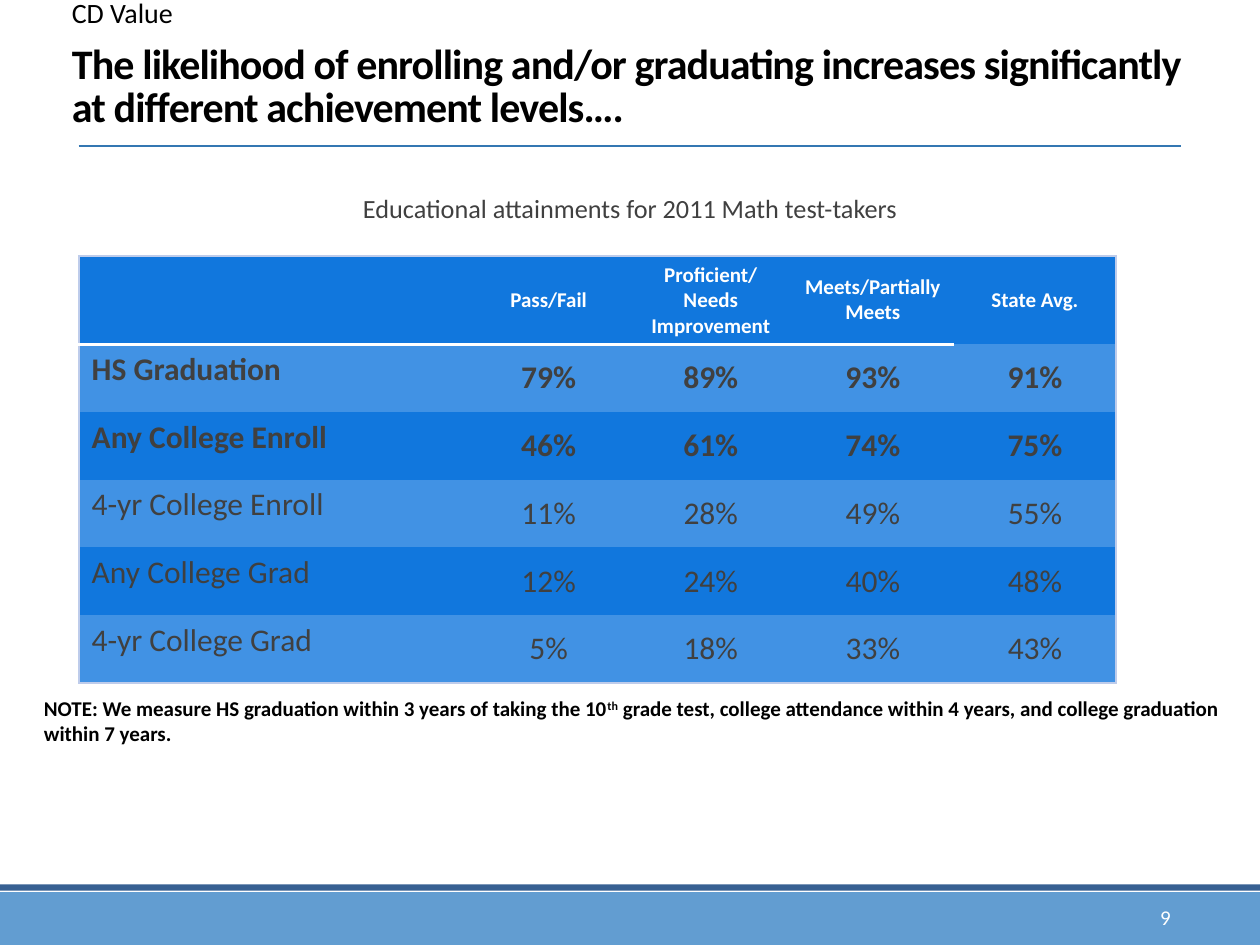
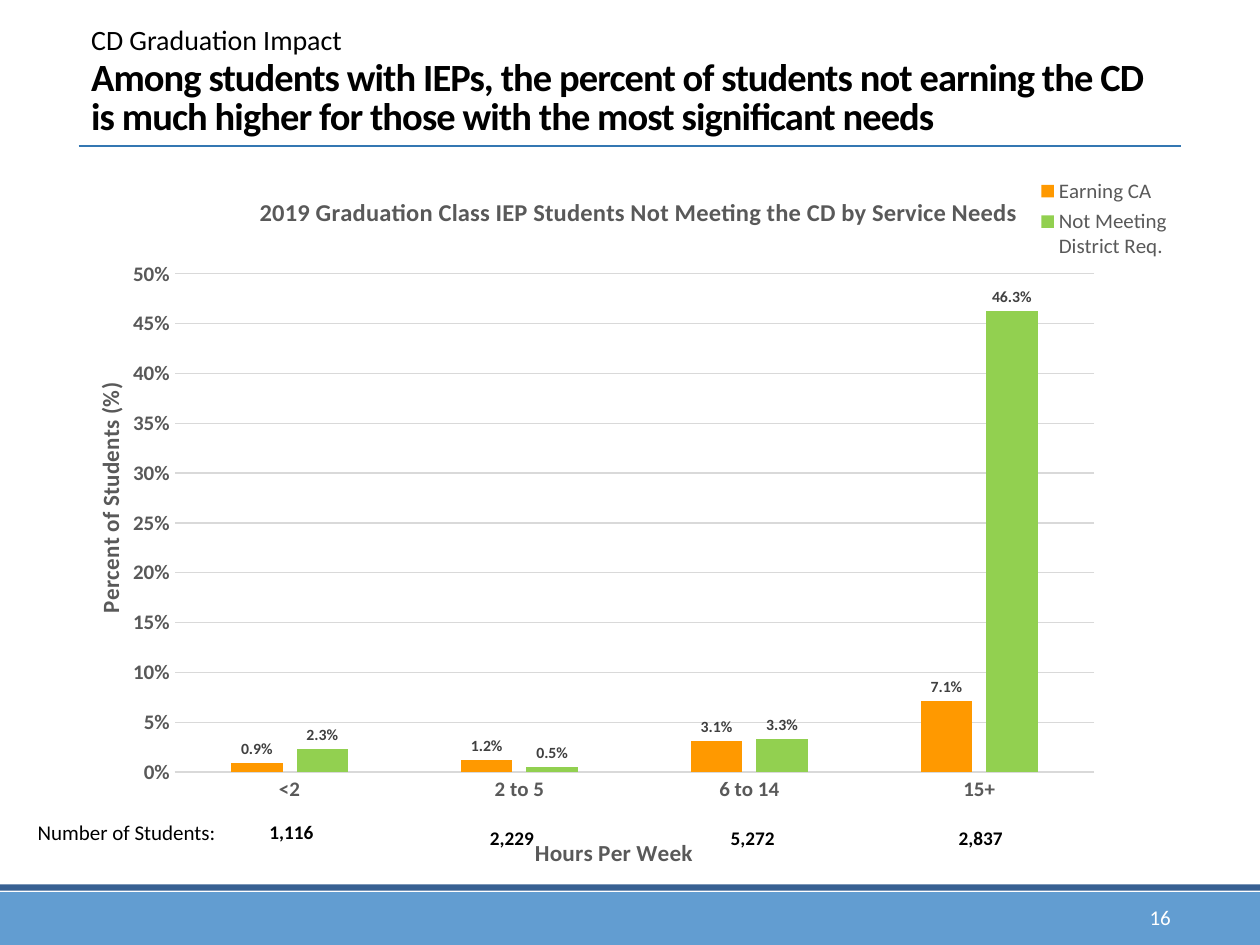
from dataclasses import dataclass
from lxml.etree import SubElement as Sub
from pptx import Presentation
from pptx.chart.data import CategoryChartData as Data
from pptx.dml.color import RGBColor as RGB
from pptx.enum.chart import XL_CHART_TYPE as Kind, XL_LEGEND_POSITION as Side
from pptx.enum.chart import XL_LABEL_POSITION as Spot, XL_TICK_MARK as Tick
from pptx.enum.shapes import MSO_CONNECTOR as Link, MSO_SHAPE as Form
from pptx.enum.text import MSO_ANCHOR as Anchor, PP_ALIGN as Align
from pptx.oxml import parse_xml
from pptx.oxml.ns import nsdecls, qn
from pptx.util import Pt


@dataclass(frozen=True)
class Theme:
    font: str = "Calibri"
    black: str = "000000"
    white: str = "FFFFFF"
    text: str = "404040"
    gray: str = "595959"
    grid: str = "D9D9D9"
    foot: str = "629DD1"
    band: str = "376092"
    rule: str = "3477B2"
    dark: str = "1177DD"
    light: str = "4192E4"
    edge: str = "BECCEB"
    orange: str = "FF9900"
    green: str = "92D050"
    label: float = 9
    count: float = 11
    small: float = 12
    axis: float = 13.3
    chart: float = 14
    lead: float = 15
    kicker: float = 16
    body: float = 18


T = Theme()


# Shared helpers

def style(font, size, color, bold=False):
    font.name, font.size, font.bold = T.font, Pt(size), bold
    font.color.rgb = RGB.from_string(color)


def place(box):
    return [Pt(v) for v in box]


def write(frame, text, size, color=T.black, bold=False, align=Align.LEFT):
    frame.text = text
    for para in frame.paragraphs:
        para.alignment = align
        style(para.font, size, color, bold)


def label(slide, box, text, size, color=T.black, bold=False,
          align=Align.LEFT, anchor=Anchor.TOP, wrap=True):
    frame = slide.shapes.add_textbox(*place(box)).text_frame
    frame.word_wrap, frame.vertical_anchor = wrap, anchor
    write(frame, text, size, color, bold, align)
    return frame


def block(slide, box, color):
    shape = slide.shapes.add_shape(Form.RECTANGLE, *place(box))
    shape.shadow.inherit = False
    shape.fill.solid()
    shape.fill.fore_color.rgb = RGB.from_string(color)
    shape.line.fill.background()
    return shape


def base(deck, number):
    """Blank slide with the title rule, footer bands and slide number."""
    slide = deck.slides.add_slide(deck.slide_layouts[6])
    block(slide, (0, 509.76, 720, 30.24), T.foot)
    block(slide, (0, 505.3, 720, 3.6), T.band)
    rule = slide.shapes.add_connector(
        Link.STRAIGHT, *place((45, 83.5, 675, 83.5)))
    rule.line.color.rgb = RGB.from_string(T.rule)
    rule.line.width = Pt(1)
    Sub(rule._element.spPr, qn("a:effectLst"))
    label(slide, (598.3, 517, 77.8, 14.4), number, T.small, T.white,
          align=Align.RIGHT, anchor=Anchor.MIDDLE)
    return slide


def heading(slide, box, text, size):
    frame = label(slide, box, text, size, bold=True, anchor=Anchor.BOTTOM)
    para = frame.paragraphs[0]
    para.line_spacing = 0.85
    para.runs[0].font._element.set("spc", "-50")


# Attainment table

HEAD = ["", "Pass/Fail", "Proficient/\nNeeds Improvement",
        "Meets/Partially Meets", "State Avg."]
ROWS = [
    ["HS Graduation", "79%", "89%", "93%", "91%"],
    ["Any College Enroll", "46%", "61%", "74%", "75%"],
    ["4-yr College Enroll", "11%", "28%", "49%", "55%"],
    ["Any College Grad", "12%", "24%", "40%", "48%"],
    ["4-yr College Grad", "5%", "18%", "33%", "43%"],
]
PLAIN = "{2D5ABB26-0587-4C30-8999-92F81FD0307C}"


def borders(cell, sides):
    """Draw the given sides; the line elements precede the cell fill."""
    props = cell._tc.get_or_add_tcPr()
    drawn = [s for s in ("lnL", "lnR", "lnT", "lnB") if s in sides]
    for spot, side in enumerate(drawn):
        color, width = sides[side]
        props.insert(spot, parse_xml(
            f'<a:{side} {nsdecls("a")} w="{Pt(width)}"><a:solidFill>'
            f'<a:srgbClr val="{color}"/></a:solidFill></a:{side}>'))


def grid(slide, box):
    cells = [HEAD] + ROWS
    last, end = len(cells) - 1, len(HEAD) - 1
    table = slide.shapes.add_table(last + 1, end + 1, *place(box)).table
    table._tbl.tblPr.find(qn("a:tableStyleId")).text = PLAIN
    table.first_row = table.horz_banding = False
    first, head = 222, 50
    for c, col in enumerate(table.columns):
        col.width = Pt((box[2] - first) / end if c else first)
    for r, row in enumerate(table.rows):
        row.height = Pt((box[3] - head) / last if r else head)
    for r, line in enumerate(cells):
        for c, text in enumerate(line):
            cell = table.cell(r, c)
            cell.fill.solid()
            cell.fill.fore_color.rgb = RGB.from_string(
                T.light if r % 2 else T.dark)
            if c:
                cell.vertical_anchor = Anchor.MIDDLE
            write(cell.text_frame, text, T.body if r else T.small,
                  T.text if r else T.white, r < 3,
                  Align.CENTER if c else Align.LEFT)
            edge, sides = (T.edge, 1), {}
            if c == 0:
                sides["lnL"] = edge
            if c == end:
                sides["lnR"] = edge
            if r == 0:
                sides["lnT"] = edge
                if c < end:
                    sides["lnB"] = (T.white, 2)
            if r == last:
                sides["lnB"] = edge
            borders(cell, sides)


def note(slide, box):
    frame = block(slide, box, T.white).text_frame
    frame.word_wrap, frame.vertical_anchor = True, Anchor.TOP
    para = frame.paragraphs[0]
    para.alignment = Align.LEFT
    runs = [para.add_run() for _ in range(3)]
    runs[0].text = ("NOTE: We measure HS graduation within 3 years "
                    "of taking the 10")
    runs[1].text = "th"
    runs[1].font._element.set("baseline", "30000")
    runs[2].text = (" grade test, college attendance within 4 years, "
                    "and college graduation within 7 years.")
    style(para.font, T.small, T.black, True)


def value(deck):
    slide = base(deck, "9")
    heading(slide, (34, 21, 652, 57.5),
            "The likelihood of enrolling and/or graduating increases "
            "significantly at different achievement levels….", 24)
    note(slide, (18, 394, 702, 36))
    grid(slide, (45.2, 146.2, 592.6, 243.7))
    lead = label(slide, (203.8, 109.6, 312.5, 18),
                 "Educational attainments for 2011 Math test-takers",
                 T.lead, T.text, align=Align.CENTER, wrap=False)
    lead.margin_left = lead.margin_right = 0
    lead.margin_top = lead.margin_bottom = 0
    label(slide, (34, -5.8, 81.4, 26.6), "CD Value", T.kicker)


# Service needs chart

SERIES = [
    ("Earning CA", (0.009, 0.012, 0.031, 0.071), T.orange),
    ("Not Meeting District Req.", (0.023, 0.005, 0.033, 0.463), T.green),
]


def layout(part, inner=False, **sizes):
    """Give a chart part a fixed place, in fractions of the chart."""
    for old in part.findall(qn("c:layout")):
        part.remove(old)
    node = parse_xml(f'<c:layout {nsdecls("c")}/>')
    hand = Sub(node, qn("c:manualLayout"))
    if inner:
        Sub(hand, qn("c:layoutTarget"), val="inner")
    for key in "xy":
        Sub(hand, qn(f"c:{key}Mode"), val="edge")
    for key, size in sizes.items():
        Sub(hand, qn(f"c:{key}"), val=str(size))
    before = [k for k in part if k.tag in (qn("c:tx"), qn("c:legendPos"))]
    part.insert(len(before), node)


def caption(title, text, size, x, y):
    write(title.text_frame, text, size, T.gray, True, Align.CENTER)
    layout(title._element, x=x, y=y)


def bars(slide, box):
    data = Data(number_format="0.0%")
    data.categories = ["<2", "2 to 5", "6 to 14", "15+"]
    for name, nums, _ in SERIES:
        data.add_series(name, nums)
    chart = slide.shapes.add_chart(
        Kind.COLUMN_CLUSTERED, *place(box), data).chart
    style(chart.font, 10, T.black)
    layout(chart._chartSpace.chart.plotArea, True,
           x=0.087, y=0.163, w=0.834, h=0.705)

    # Columns and their values
    plot = chart.plots[0]
    plot.gap_width, plot.overlap = 219, -27
    plot.vary_by_categories = False
    for series, (_, _, color) in zip(plot.series, SERIES):
        series.format.fill.solid()
        series.format.fill.fore_color.rgb = RGB.from_string(color)
        tags = series.data_labels
        tags.show_value, tags.position = True, Spot.OUTSIDE_END
        tags.number_format, tags.number_format_is_linked = "0.0%", False
        style(tags.font, T.label, T.text, True)

    # Axes
    cat, val = chart.category_axis, chart.value_axis
    for axis in (cat, val):
        axis.major_tick_mark = axis.minor_tick_mark = Tick.NONE
        style(axis.tick_labels.font, T.small, T.gray, True)
    val.minimum_scale, val.maximum_scale, val.major_unit = 0, 0.5, 0.05
    val.tick_labels.number_format = "0%"
    val.tick_labels.number_format_is_linked = False
    val.format.line.fill.background()
    for line in (cat.format.line, val.major_gridlines.format.line):
        line.color.rgb = RGB.from_string(T.grid)
        line.width = Pt(0.75)

    # Titles and legend
    chart.has_title = True
    caption(chart.chart_title, "2019 Graduation Class IEP Students Not "
            "Meeting the CD by Service Needs", T.chart, 0.16, 0.045)
    caption(cat.axis_title, "Hours Per Week", T.axis, 0.41, 0.953)
    caption(val.axis_title, "Percent of Students (%)", T.axis, 0.01, 0.315)
    turn = val.axis_title.text_frame._txBody.bodyPr
    turn.set("rot", "-5400000")
    turn.set("vert", "horz")
    chart.has_legend = True
    legend = chart.legend
    legend.position, legend.include_in_layout = Side.RIGHT, False
    style(legend.font, T.small, T.gray)
    layout(legend._element, x=0.86, y=0.02, w=0.14, h=0.13)


def counts(slide, box):
    """Row of student numbers under the columns."""
    left, top, width, height = box
    label(slide, (left, top, 145, height), "Number of Students:", T.small)
    for text, x, y in (("1,116", 132.5, 0), ("2,229", 258.5, 3.6),
                       ("5,272", 396, 3.6), ("2,837", 526.3, 3.6)):
        label(slide, (left + x, top + y, 49, height), text,
              T.count, bold=True)


def impact(deck):
    slide = base(deck, "16")
    heading(slide, (45, 22.3, 630, 60.5),
            "Among students with IEPs, the percent of students not earning "
            "the CD is much higher for those with the most significant "
            "needs", 22)
    bars(slide, (45, 90.7, 630, 409))
    label(slide, (45, 9.4, 170, 26.6), "CD Graduation Impact", T.kicker)
    counts(slide, (14.4, 465, 576, 21))


def main():
    deck = Presentation()
    deck.slide_width, deck.slide_height = Pt(720), Pt(540)
    value(deck)
    impact(deck)
    deck.save("out.pptx")


if __name__ == "__main__":
    main()
